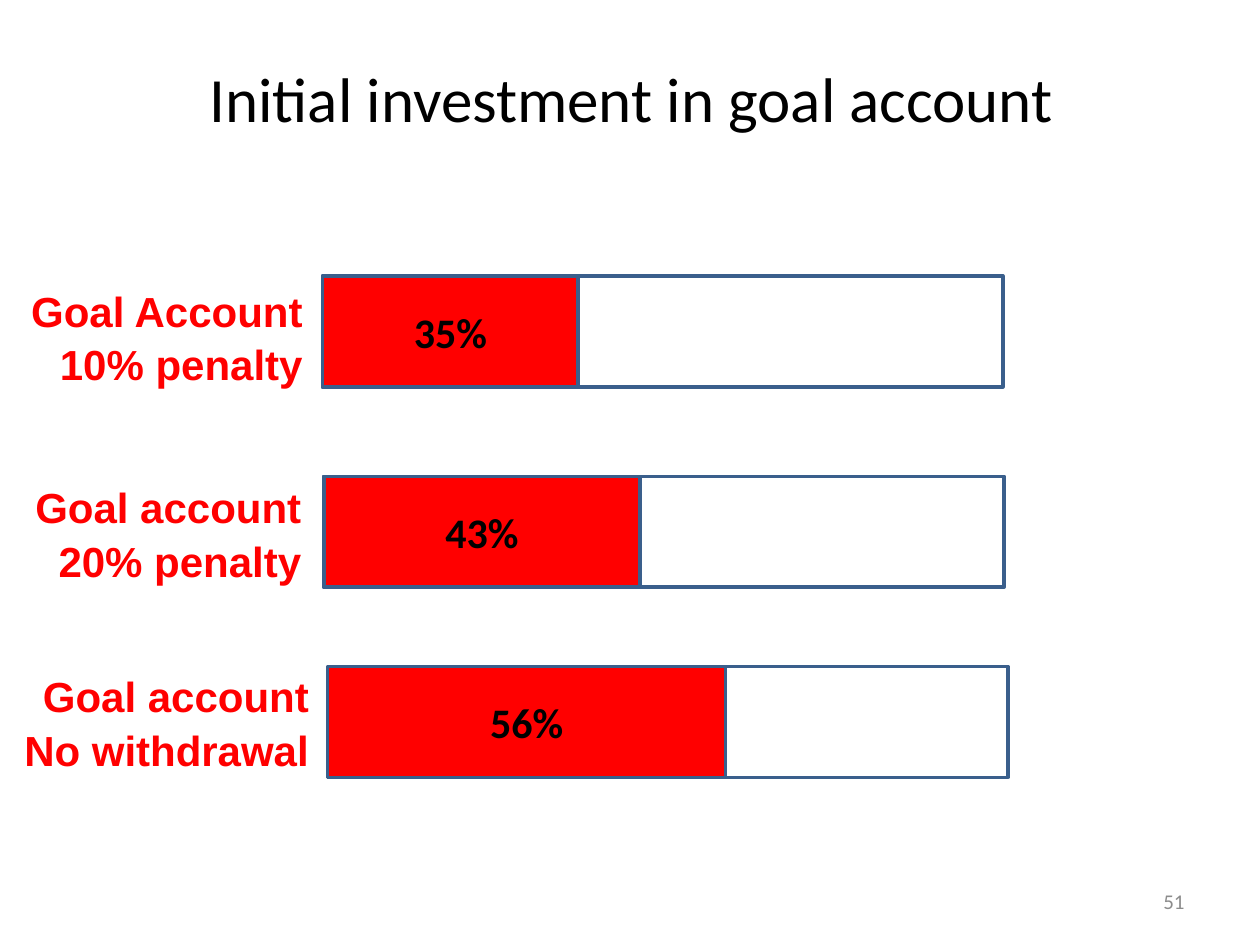
from dataclasses import dataclass

from pptx import Presentation
from pptx.dml.color import RGBColor
from pptx.enum.shapes import MSO_SHAPE
from pptx.enum.text import MSO_ANCHOR as Anchor, PP_ALIGN as Align
from pptx.shapes.autoshape import Shape
from pptx.slide import Slide
from pptx.util import Inches, Pt

BLACK = RGBColor(0x00, 0x00, 0x00)
RED = RGBColor(0xFF, 0x00, 0x00)
OUTLINE = RGBColor(0x3A, 0x5F, 0x8C)
GRAY = RGBColor(0x8C, 0x8C, 0x8C)

BAR_WIDTH, BAR_HEIGHT = 5.4, 0.88
LABEL_HEIGHT = 0.91


@dataclass
class ShareBar:
    share: str
    left: float
    top: float
    filled_width: float
    label: list[str]
    label_left: float
    label_top: float
    label_width: float


BARS = [
    ShareBar("35%", 2.56, 2.19, 2.03, ["Goal Account", "10% penalty"], -0.21, 2.19, 2.71),
    ShareBar("43%", 2.57, 3.78, 2.51, ["Goal account", "20% penalty"], 0.16, 3.75, 2.33),
    ShareBar("56%", 2.6, 5.29, 3.16, ["Goal account", "No withdrawal"], 0.07, 5.25, 2.48),
]


def write_text(shape: Shape, lines: list[str], *, size: float, color: RGBColor = BLACK,
               font: str = "Calibri", bold: bool = False, align: Align = Align.CENTER,
               anchor: Anchor = Anchor.MIDDLE, spacing: float = 1.0) -> None:
    frame = shape.text_frame
    frame.word_wrap = True
    frame.vertical_anchor = anchor
    for index, line in enumerate(lines):
        paragraph = frame.add_paragraph() if index else frame.paragraphs[0]
        paragraph.alignment = align
        paragraph.line_spacing = spacing
        run = paragraph.add_run()
        run.text = line
        run.font.name = font
        run.font.size = Pt(size)
        run.font.bold = bold
        run.font.color.rgb = color


def add_text(slide: Slide, left: float, top: float, width: float, height: float,
             lines: list[str], **text_format) -> None:
    box = slide.shapes.add_textbox(Inches(left), Inches(top), Inches(width), Inches(height))
    write_text(box, lines, **text_format)


def add_rectangle(slide: Slide, left: float, top: float, width: float,
                  fill: RGBColor | None = None) -> Shape:
    shape = slide.shapes.add_shape(MSO_SHAPE.RECTANGLE, Inches(left), Inches(top),
                                   Inches(width), Inches(BAR_HEIGHT))
    shape.shadow.inherit = False
    if fill is None:
        shape.fill.background()
    else:
        shape.fill.solid()
        shape.fill.fore_color.rgb = fill
    shape.line.color.rgb = OUTLINE
    shape.line.width = Pt(2)
    return shape


def draw_bar(slide: Slide, bar: ShareBar) -> None:
    add_rectangle(slide, bar.left, bar.top, BAR_WIDTH)
    filled = add_rectangle(slide, bar.left, bar.top, bar.filled_width, RED)
    write_text(filled, [bar.share], size=24, bold=True)
    add_text(slide, bar.label_left, bar.label_top, bar.label_width, LABEL_HEIGHT, bar.label,
             size=24, color=RED, font="Arial", bold=True, align=Align.RIGHT,
             anchor=Anchor.TOP, spacing=1.06)


def main() -> None:
    presentation = Presentation()
    presentation.slide_width = Inches(10)
    presentation.slide_height = Inches(7.5)
    slide = presentation.slides.add_slide(presentation.slide_layouts[6])

    # Title
    add_text(slide, 0.24, 0.15, 9.54, 1.25, ["Initial investment in goal account"], size=36)

    # Labelled bars
    for bar in BARS:
        draw_bar(slide, bar)

    # Page number
    add_text(slide, 7.17, 6.95, 2.33, 0.4, ["51"], size=12, color=GRAY, align=Align.RIGHT)

    presentation.save("out.pptx")


if __name__ == "__main__":
    main()
